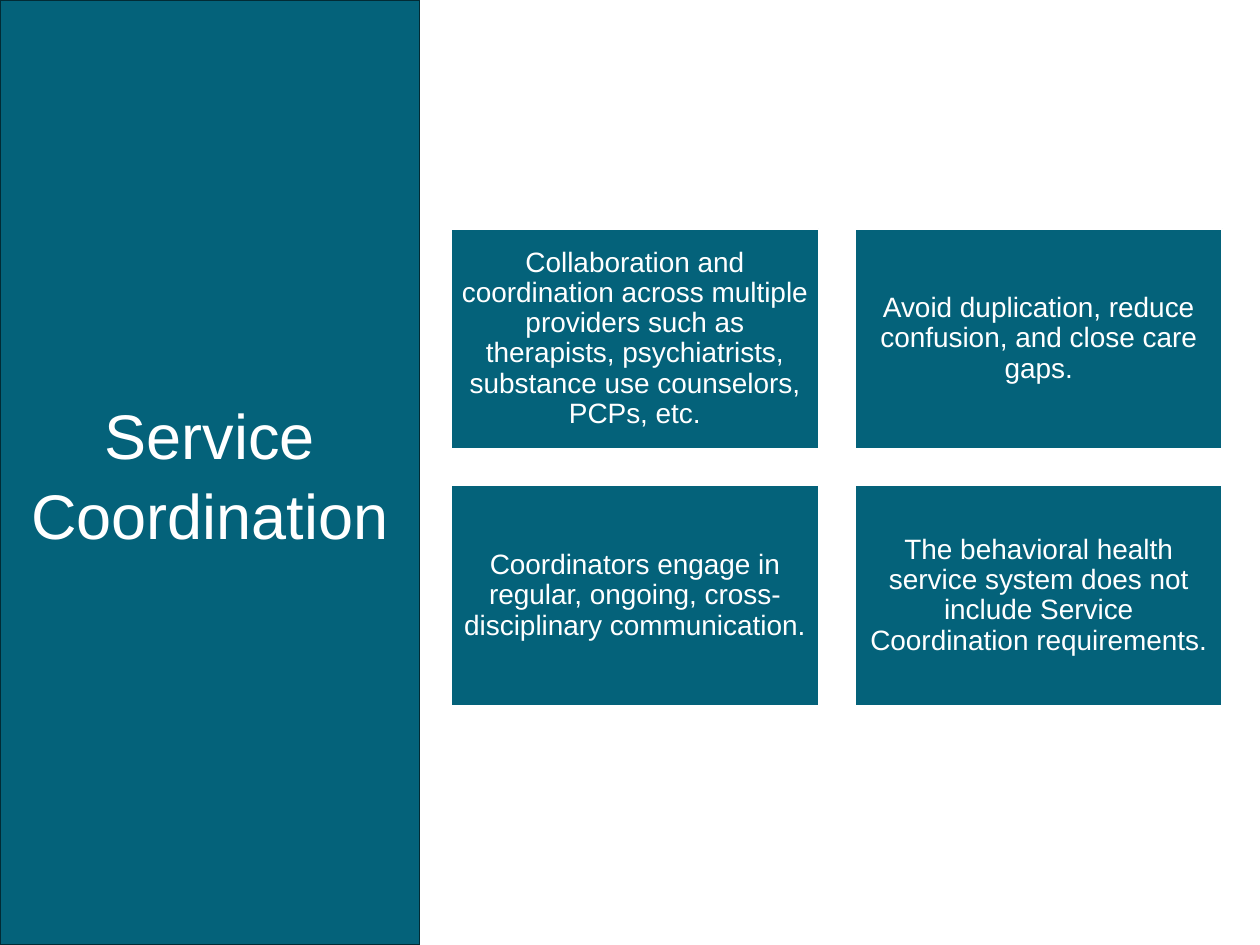
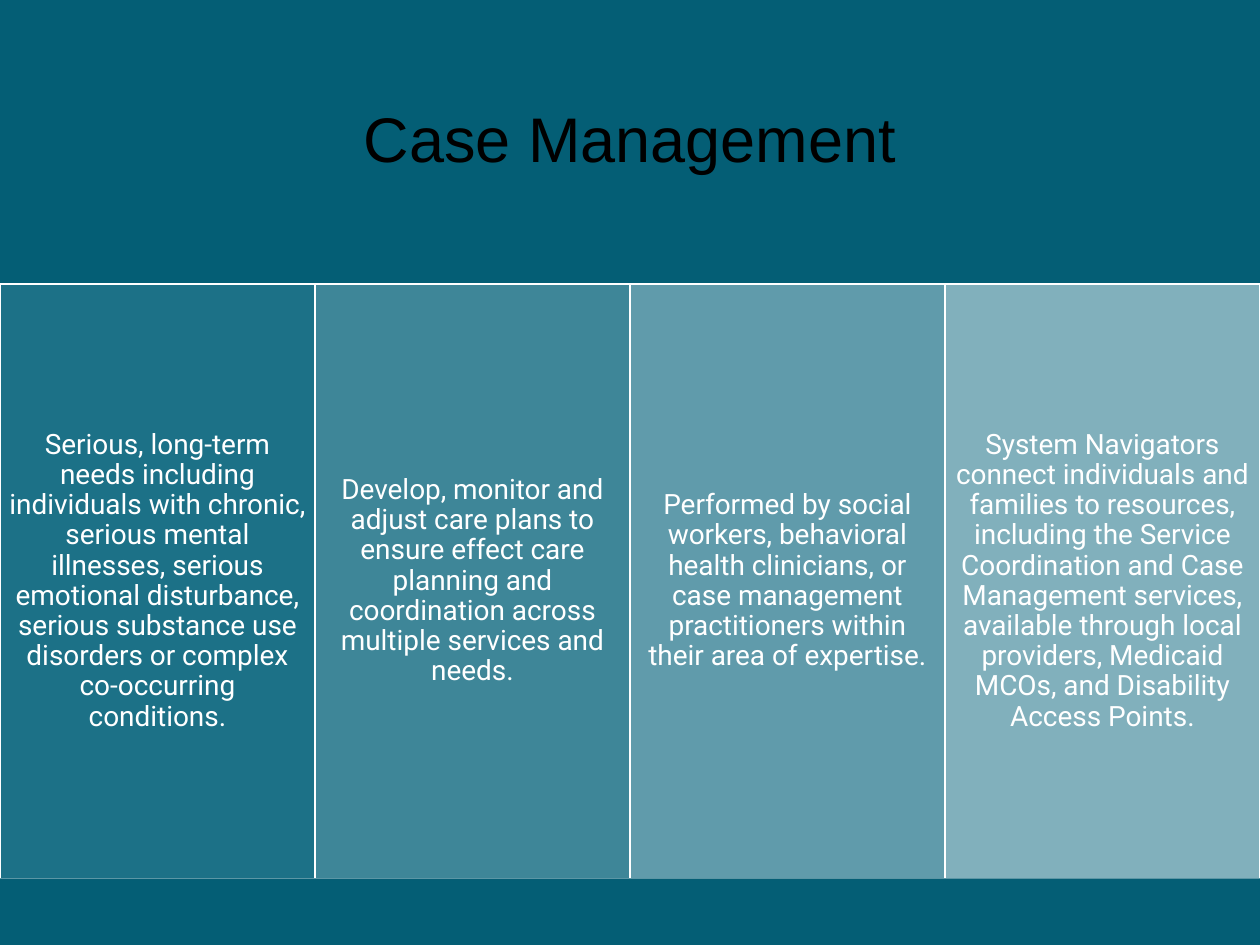
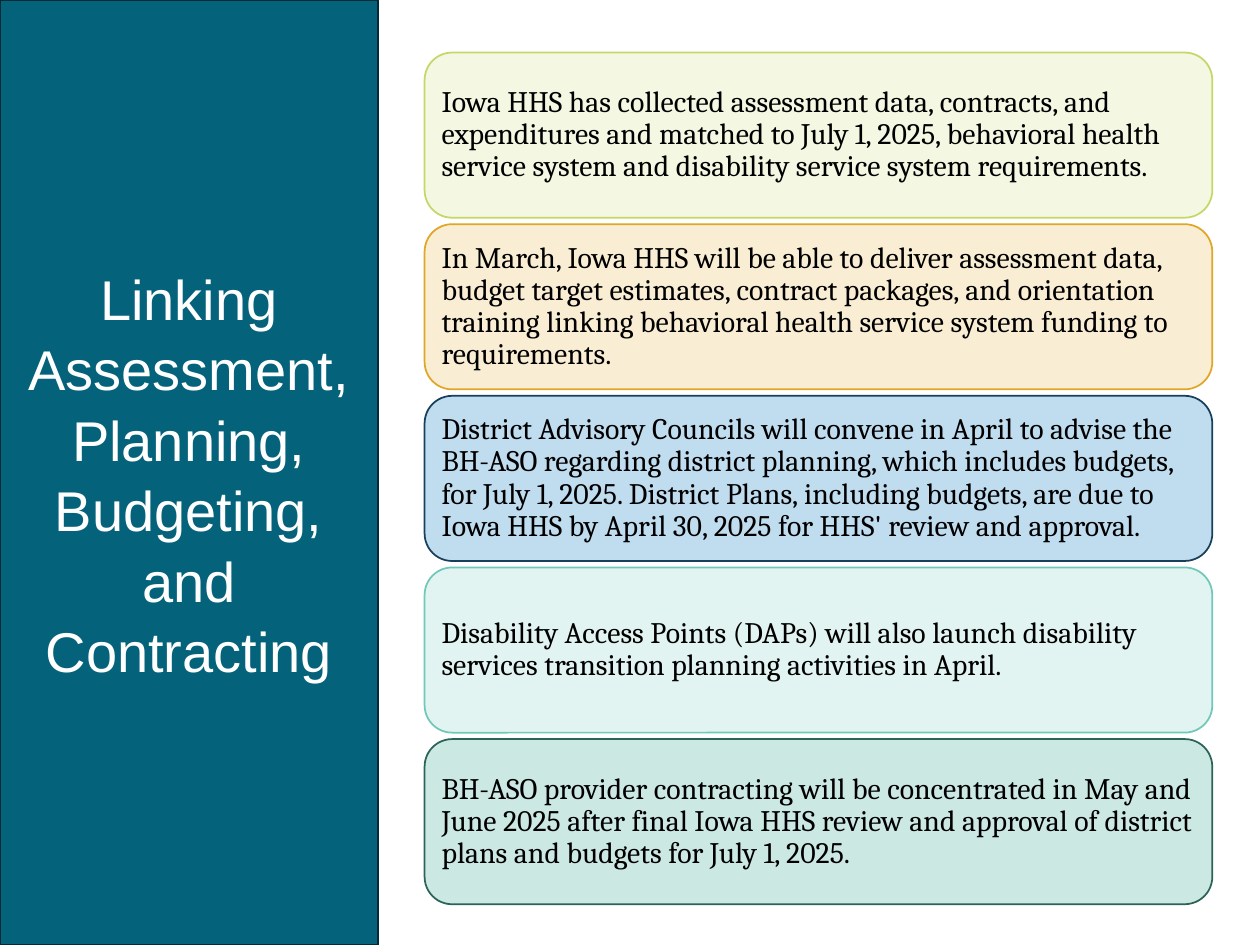
from lxml import etree
from pptx import Presentation
from pptx.dml.color import RGBColor
from pptx.enum.shapes import MSO_SHAPE
from pptx.enum.text import MSO_ANCHOR, MSO_AUTO_SIZE, PP_ALIGN
from pptx.oxml.ns import qn
from pptx.util import Cm, Pt

RECT, ROUND = MSO_SHAPE.RECTANGLE, MSO_SHAPE.ROUNDED_RECTANGLE
LEFT, CENTER = PP_ALIGN.LEFT, PP_ALIGN.CENTER
MIDDLE = MSO_ANCHOR.MIDDLE
NO_FIT = MSO_AUTO_SIZE.NONE

WIDE, HIGH = 25.4, 19.05
TEAL, BAND, EDGE = "04627A", "045E75", "022B35"
WHITE, BLACK = "FFFFFF", "000000"

SIDE = {"name": "Arial", "size": Pt(36), "color": WHITE}
SIDE_LOW = {**SIDE, "size": Pt(32)}
HEAD = {**SIDE, "color": BLACK}
BLOCK = {"name": "Arial", "size": Pt(16), "color": WHITE}
COLUMN = {**BLOCK, "name": "Roboto"}
STEP = {"name": "Cambria", "size": Pt(17), "color": BLACK}

DUTIES = [
    "Collaboration and coordination across multiple providers such as "
    "therapists, psychiatrists, substance use counselors, PCPs, etc.",
    "Avoid duplication, reduce confusion, and close care gaps.",
    "Coordinators engage in regular, ongoing, "
    "cross-disciplinary communication. ",
    "The behavioral health service system does not "
    "include Service Coordination requirements.",
]
CASES = [
    "Serious, long-term needs including individuals with chronic, serious "
    "mental illnesses, serious emotional disturbance, serious substance use "
    "disorders or complex co-occurring conditions.",
    "Develop, monitor and adjust care plans to ensure effect care planning "
    "and coordination across multiple services and needs.",
    "Performed by social workers, behavioral health clinicians, or case "
    "management practitioners within their area of expertise.",
    "System Navigators connect individuals and families to resources, "
    "including the Service Coordination and Case Management services, "
    "available through local providers, Medicaid MCOs, and Disability "
    "Access Points.",
]
STEPS = [
    ("F4F7E1", "C6D668",
     "Iowa HHS has collected assessment data, contracts, and expenditures and "
     "matched to July 1, 2025, behavioral health service system and "
     "disability service system requirements."),
    ("F9EDD4", "E0A626",
     "In March, Iowa HHS will be able to deliver assessment data, budget "
     "target estimates, contract packages, and orientation training linking "
     "behavioral health service system funding to requirements."),
    ("C0DCEF", "18405B",
     "District Advisory Councils will convene in April to advise the BH-ASO "
     "regarding district planning, which includes budgets, for July 1, 2025. "
     "District Plans, including budgets, are due to Iowa HHS by April 30, "
     "2025 for HHS' review and approval."),
    ("E2F4F1", "70C8B8",
     "Disability Access Points (DAPs) will also launch disability services "
     "transition planning activities in April."),
    ("CCE8E3", "2C6358",
     "BH-ASO provider contracting will be concentrated in May and June 2025 "
     "after final Iowa HHS review and approval of district plans and budgets "
     "for July 1, 2025."),
]


def rgb(code):
    return RGBColor.from_string(code)


def paint(shape, fill, line=None, alpha=None):
    """Set fill and outline; alpha is the opacity in percent."""
    shape.fill.solid()
    shape.fill.fore_color.rgb = rgb(fill)
    if alpha is not None:
        color = shape.fill._xPr.find(qn("a:solidFill"))[0]
        etree.SubElement(color, qn("a:alpha")).set("val", str(round(alpha * 1000)))
    if line:
        shape.line.color.rgb = rgb(line)
        shape.line.width = Pt(1)
    else:
        shape.line.fill.background()


def write(shape, lines, style, align=CENTER, space=0.9, inset=0.18):
    frame = shape.text_frame
    frame.text = "\n".join(lines)
    side = Cm(inset)
    form = {"word_wrap": True, "auto_size": NO_FIT, "vertical_anchor": MIDDLE,
            "margin_left": side, "margin_right": side,
            "margin_top": side, "margin_bottom": side}
    for key, value in form.items():
        setattr(frame, key, value)
    for para in frame.paragraphs:
        para.alignment = align
        para.line_spacing = space
        for key, value in style.items():
            if key == "color":
                para.font.color.rgb = rgb(value)
            else:
                setattr(para.font, key, value)


def add_box(slide, kind, place, fill, line=None, alpha=None):
    box = slide.shapes.add_shape(kind, *map(Cm, place))
    box.shadow.inherit = False
    paint(box, fill, line, alpha)
    return box


def add_slide(deck, lines, size, fill, line, style, **form):
    """Add a slide whose title fills a panel from the top left corner."""
    slide = deck.slides.add_slide(deck.slide_layouts[5])
    title = slide.shapes.title
    title.left = title.top = 0
    title.width, title.height = map(Cm, size)
    paint(title, fill, line)
    write(title, lines, style, **form)
    return slide


def add_side(deck, lines, width, style):
    return add_slide(deck, lines, (width, HIGH), TEAL, EDGE, style,
                     space=1.05, inset=0.25)


def add_grid(slide):
    wide, high, gap = 7.4, 4.44, 0.74
    for i, text in enumerate(DUTIES):
        row, col = divmod(i, 2)
        place = 9.1 + col * (wide + gap), 4.61 + row * (high + gap), wide, high
        write(add_box(slide, RECT, place, TEAL, WHITE), [text], BLOCK)


def add_columns(slide, top, high):
    wide = WIDE / len(CASES)
    fade = 40 / (len(CASES) - 1)
    for i, text in enumerate(CASES):
        place = i * wide, top, wide, high
        box = add_box(slide, RECT, place, TEAL, WHITE, 90 - i * fade)
        write(box, [text], COLUMN)


def add_steps(slide):
    high, gap = 3.33, 0.13
    for i, (fill, line, text) in enumerate(STEPS):
        place = 8.56, 1.06 + i * (high + gap), 15.88, high
        write(add_box(slide, ROUND, place, fill, line), [text], STEP, LEFT)


def main():
    deck = Presentation()
    deck.slide_width, deck.slide_height = Cm(WIDE), Cm(HIGH)

    add_grid(add_side(deck, ["Service Coordination"], 8.46, SIDE))

    top, foot = 5.72, 17.71
    slide = add_slide(deck, ["Case Management"], (WIDE, top), BAND, None, HEAD,
                      inset=0.38)
    add_columns(slide, top, foot - top)
    add_box(slide, RECT, (0, foot, WIDE, HIGH - foot), BAND)

    lines = ["Linking Assessment, Planning, Budgeting,", "and Contracting"]
    add_steps(add_side(deck, lines, 7.62, SIDE_LOW))

    deck.save("out.pptx")


if __name__ == "__main__":
    main()
